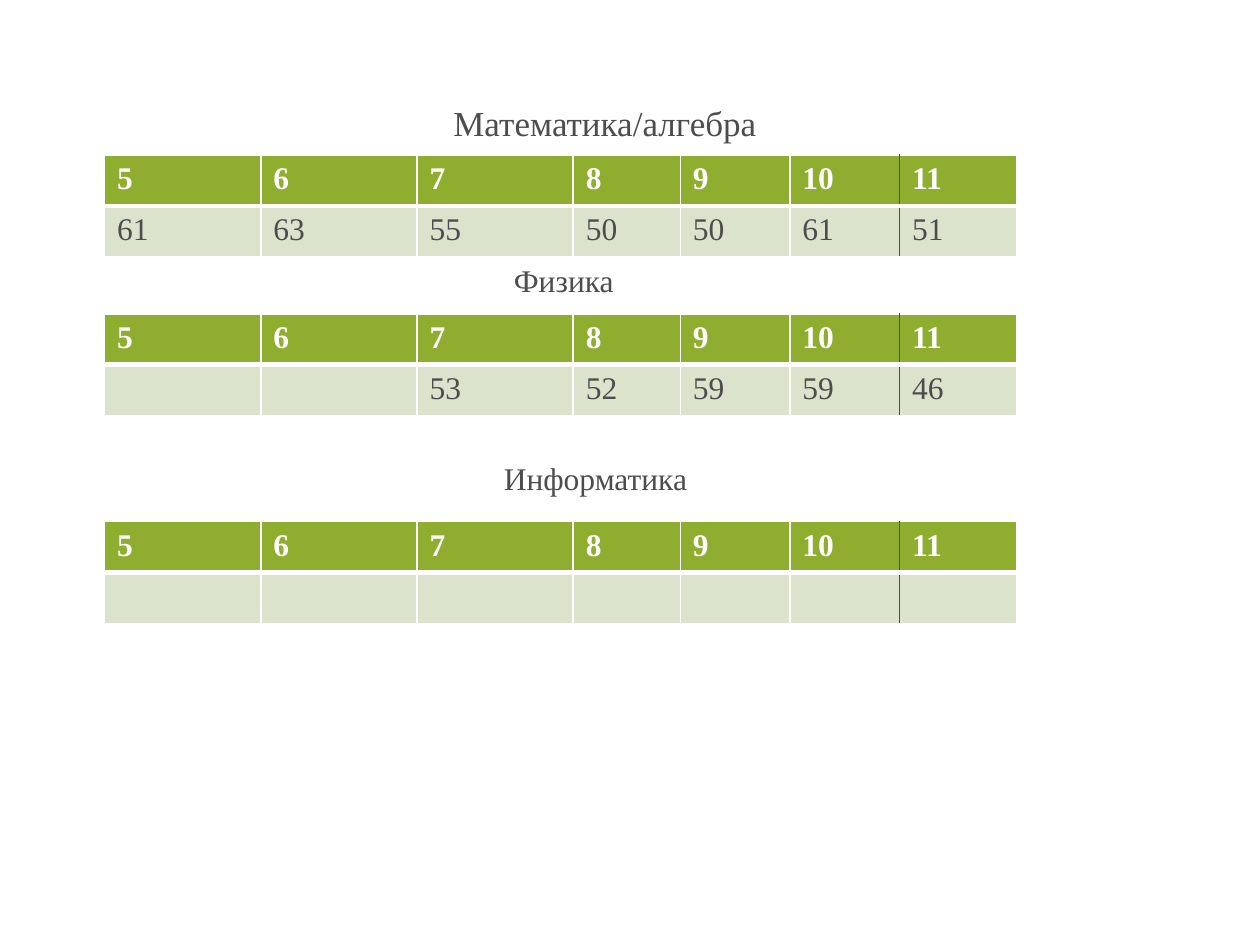
from pptx import Presentation
from pptx.dml.color import RGBColor
from pptx.enum.text import MSO_AUTO_SIZE
from pptx.oxml.ns import qn
from pptx.util import Inches, Pt
from lxml.etree import SubElement

WIDTH, HEIGHT = 10, 7.5
GREEN, PALE, GREY, WHITE = "8FAD2F", "DBE3CD", "4D4D4D", "FFFFFF"
GRADES = ["5", "6", "7", "8", "9", "10", "11"]
COLUMNS = [1.24, 1.24, 1.24, 0.85, 0.87, 0.87, 0.93]
ROW = 0.405
LEFT = 0.83
SUBJECTS = [
    dict(name="Математика/алгебра", box=(3.5, 0.76, 2.63, 0.44), size=20, wrap=False,
         top=1.23, scores=["61", "63", "55", "50", "50", "61", "51"]),
    dict(name="Физика", box=(3.98, 2.02, 3.28, 0.4), size=18, wrap=True,
         top=2.49, scores=["", "", "53", "52", "59", "59", "46"]),
    dict(name="Информатика", box=(3.9, 3.59, 3.28, 0.4), size=18, wrap=True,
         top=4.14, scores=[""] * len(GRADES)),
]


def rgb(value):
    """Turn a hex string into a colour."""
    return RGBColor.from_string(value)


def write(tf, text, size=18, color=GREY, bold=False):
    """Put formatted text in the first paragraph of a frame."""
    p = tf.paragraphs[0]
    p.font.size = Pt(size)
    if text:
        r = p.add_run()
        r.text = text
        r.font.name = "Times New Roman"
        r.font.size = Pt(size)
        r.font.bold = bold
        r.font.color.rgb = rgb(color)


def add_border(cell, side, color, width):
    """Add one border line to a cell, in the order L, R, T, B."""
    ln = SubElement(cell._tc.get_or_add_tcPr(), qn(f"a:ln{side}"), w=str(Pt(width)))
    fill = SubElement(ln, qn("a:solidFill"))
    SubElement(fill, qn("a:srgbClr"), val=color)


def format_cell(cell, row, col):
    """Give a cell its borders and fill."""
    last = len(GRADES) - 1
    add_border(cell, "L", GREY if col == last else WHITE, 1)
    add_border(cell, "R", GREY if col == last - 1 else WHITE, 1)
    add_border(cell, "T", WHITE, 3 if row else 1)
    add_border(cell, "B", WHITE, 1 if row else 3)
    cell.fill.solid()
    cell.fill.fore_color.rgb = rgb(PALE if row else GREEN)


def add_caption(s, box, text, size, wrap):
    """Place the name of a subject in its box."""
    tf = s.shapes.add_textbox(*map(Inches, box)).text_frame
    tf.word_wrap = wrap
    tf.auto_size = MSO_AUTO_SIZE.SHAPE_TO_FIT_TEXT
    write(tf, text, size=size)


def add_scores(s, left, top, scores):
    """Place a table of grades and scores."""
    rows = [GRADES, scores]
    box = left, top, sum(COLUMNS), ROW * len(rows)
    table = s.shapes.add_table(len(rows), len(GRADES), *map(Inches, box)).table
    for column, width in zip(table.columns, COLUMNS):
        column.width = Inches(width)
    for i, values in enumerate(rows):
        for j, value in enumerate(values):
            cell = table.cell(i, j)
            format_cell(cell, i, j)
            write(cell.text_frame, value, color=GREY if i else WHITE, bold=i == 0)


def main():
    """Build the slide of scores by subject."""
    prs = Presentation()
    prs.slide_width, prs.slide_height = Inches(WIDTH), Inches(HEIGHT)
    s = prs.slides.add_slide(prs.slide_layouts[6])
    for subject in SUBJECTS:
        add_caption(s, subject["box"], subject["name"], subject["size"], subject["wrap"])
        add_scores(s, LEFT, subject["top"], subject["scores"])
    prs.save("out.pptx")


if __name__ == "__main__":
    main()
